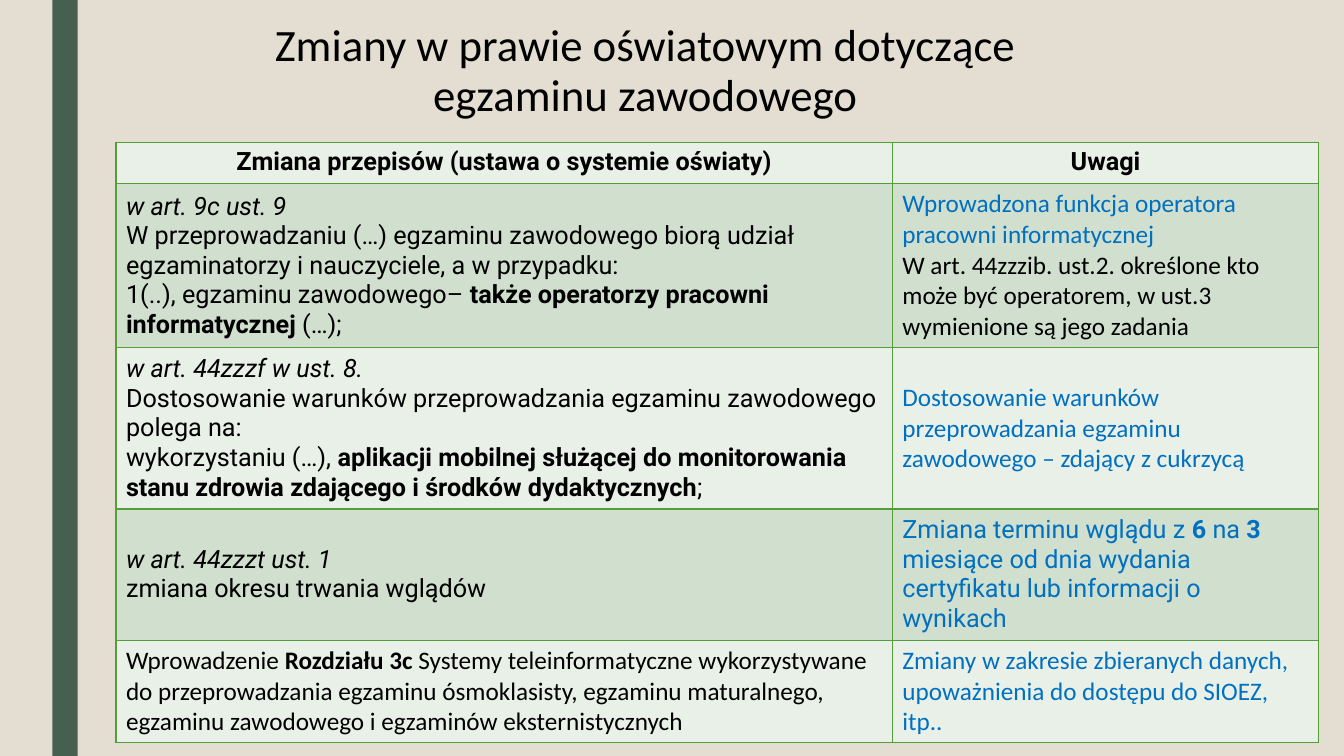
from dataclasses import dataclass

from lxml import etree
from pptx import Presentation
from pptx import util as u
from pptx.dml.color import RGBColor
from pptx.enum import shapes, text
from pptx.oxml import ns


@dataclass(frozen=True)
class Theme:
    """Colours, fonts and type sizes of the slide."""
    background: str = "E3DED1"
    sidebar: str = "455F51"
    border: str = "549E39"
    light_row: str = "E9F0E8"
    dark_row: str = "D1DFCE"
    ink: str = "000000"
    accent: str = "0070C0"
    roboto: str = "Roboto"
    calibri: str = "Calibri"
    title_size: int = 32
    body_size: int = 18


THEME = Theme()
BOLD = {"bold": True}
ITALIC = {"italic": True}
BLUE = {"color": THEME.accent}
CALIBRI = {"font": THEME.calibri}
NOTE = BLUE | CALIBRI

TITLE = ["Zmiany w prawie oświatowym dotyczące", "egzaminu zawodowego"]
HEADER = ["Zmiana przepisów (ustawa o systemie oświaty)", "Uwagi"]
COLUMN_WIDTHS = [7.7, 4.23]
ROW_HEIGHTS = [0.41, 1.63, 1.57, 1.27, 1.02]
BODY = [
    [
        [
            [("w art. 9c ust. 9", ITALIC)],
            [("W przeprowadzaniu (…) egzaminu zawodowego biorą udział "
              "egzaminatorzy i nauczyciele, a w przypadku:", {})],
            [("1(..), egzaminu zawodowego– ", {}),
             ("także operatorzy pracowni informatycznej ", BOLD),
             ("(…);", {})],
        ],
        [
            [("Wprowadzona funkcja operatora pracowni informatycznej", NOTE)],
            [("W art. 44zzzib. ust.2. określone kto może być operatorem, "
              "w ust.3 wymienione są jego zadania", CALIBRI)],
        ],
    ],
    [
        [
            [("w art. 44zzzf w ust. 8.", ITALIC)],
            [("Dostosowanie warunków przeprowadzania egzaminu zawodowego "
              "polega na:", {})],
            [("wykorzystaniu (…), ", {}),
             ("aplikacji mobilnej służącej do monitorowania stanu zdrowia "
              "zdającego i środków dydaktycznych", BOLD),
             (";", {})],
        ],
        [
            [("Dostosowanie warunków przeprowadzania egzaminu zawodowego "
              "– zdający z cukrzycą", NOTE)],
        ],
    ],
    [
        [
            [("w art. 44zzzt ust. 1", ITALIC)],
            [("zmiana okresu trwania wglądów", {})],
        ],
        [
            [("Zmiana terminu wglądu z ", BLUE), ("6", BLUE | BOLD),
             (" na ", BLUE), ("3", BLUE | BOLD),
             (" miesiące od dnia wydania certyfikatu lub informacji "
              "o wynikach", BLUE)],
        ],
    ],
    [
        [
            [("Wprowadzenie ", CALIBRI), ("Rozdziału 3c ", CALIBRI | BOLD),
             ("Systemy teleinformatyczne wykorzystywane do przeprowadzania "
              "egzaminu ósmoklasisty, egzaminu maturalnego, egzaminu "
              "zawodowego i egzaminów eksternistycznych", CALIBRI)],
        ],
        [
            [("Zmiany w zakresie zbieranych danych, upoważnienia do dostępu "
              "do SIOEZ, itp..", NOTE)],
        ],
    ],
]


def add_span(para, words, font=THEME.roboto, size=THEME.body_size,
             color=THEME.ink, bold=False, italic=False):
    """Append formatted text to a paragraph."""
    span = para.add_run()
    span.text = words
    span.font.name = font
    span.font.size = u.Pt(size)
    span.font.color.rgb = RGBColor.from_string(color)
    span.font.bold = bold
    span.font.italic = italic


def add_sidebar(page, left, top, width, height):
    """Draw the vertical band."""
    band = page.shapes.add_shape(
        shapes.MSO_SHAPE.RECTANGLE,
        *map(u.Inches, (left, top, width, height)))
    band.shadow.inherit = False
    band.fill.solid()
    band.fill.fore_color.rgb = RGBColor.from_string(THEME.sidebar)
    band.line.fill.background()


def add_title(page, left, top, width, height):
    """Place the centred two-line title."""
    box = page.shapes.add_textbox(*map(u.Inches, (left, top, width, height)))
    frame = box.text_frame
    frame.word_wrap = True
    frame.vertical_anchor = text.MSO_ANCHOR.MIDDLE
    para = frame.paragraphs[0]
    para.alignment = text.PP_ALIGN.CENTER
    para.line_spacing = 0.93
    for index, line in enumerate(TITLE):
        if index:
            para.add_line_break()
        add_span(para, line, font=THEME.calibri, size=THEME.title_size)


def style_cell(cell, fill):
    """Give a cell its border and fill."""
    properties = cell._tc.get_or_add_tcPr()
    for side in ("a:lnL", "a:lnR", "a:lnT", "a:lnB"):
        line = etree.SubElement(properties, ns.qn(side), w=str(u.Pt(1)))
        solid = etree.SubElement(line, ns.qn("a:solidFill"))
        etree.SubElement(solid, ns.qn("a:srgbClr"), val=THEME.border)
    cell.fill.solid()
    cell.fill.fore_color.rgb = RGBColor.from_string(fill)


def fill_cell(cell, paragraphs, alignment):
    """Write paragraphs of formatted spans into a cell."""
    frame = cell.text_frame
    for index, spans in enumerate(paragraphs):
        para = frame.add_paragraph() if index else frame.paragraphs[0]
        para.alignment = alignment
        for words, style in spans:
            add_span(para, words, **style)


def add_changes_table(page, left, top):
    """Build the table of legal changes and remarks."""
    rows = [[[[(label, BOLD)]] for label in HEADER]] + BODY
    table = page.shapes.add_table(
        len(rows), len(HEADER), u.Inches(left), u.Inches(top),
        u.Inches(sum(COLUMN_WIDTHS)), u.Inches(sum(ROW_HEIGHTS))).table
    for column, width in zip(table.columns, COLUMN_WIDTHS):
        column.width = u.Inches(width)
    for index, (row, height, contents) in enumerate(
            zip(table.rows, ROW_HEIGHTS, rows)):
        row.height = u.Inches(height)
        fill = THEME.dark_row if index % 2 else THEME.light_row
        alignment = text.PP_ALIGN.LEFT if index else text.PP_ALIGN.CENTER
        for cell, paragraphs in zip(row.cells, contents):
            style_cell(cell, fill)
            fill_cell(cell, paragraphs, alignment)
            if index:
                cell.vertical_anchor = text.MSO_ANCHOR.MIDDLE


def main():
    """Build and save the deck."""
    deck = Presentation()
    deck.slide_width = u.Inches(13.33)
    deck.slide_height = u.Inches(7.5)
    page = deck.slides.add_slide(deck.slide_layouts[6])
    page.background.fill.solid()
    page.background.fill.fore_color.rgb = RGBColor.from_string(
        THEME.background)
    add_sidebar(page, 0.52, 0, 0.25, 7.5)
    add_title(page, 1.15, 0, 10.5, 1.41)
    add_changes_table(page, 1.15, 1.41)
    deck.save("out.pptx")


if __name__ == "__main__":
    main()
